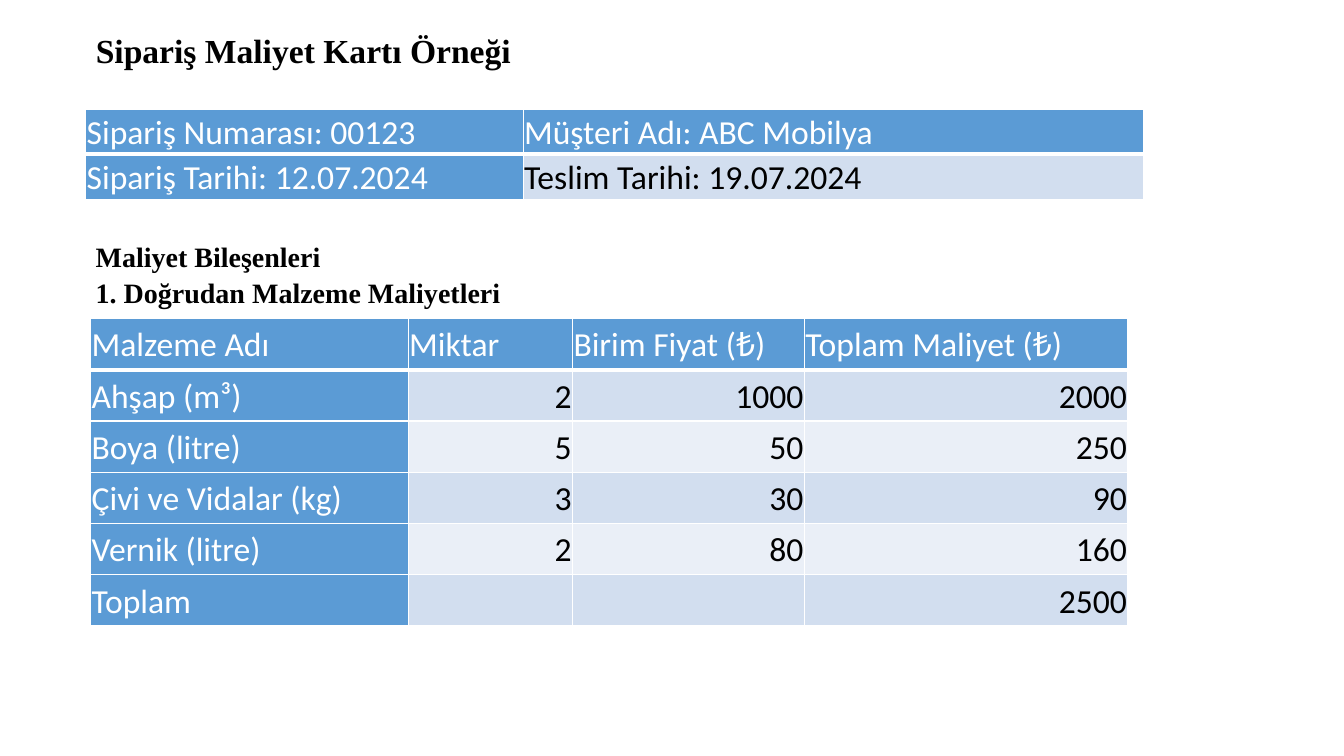
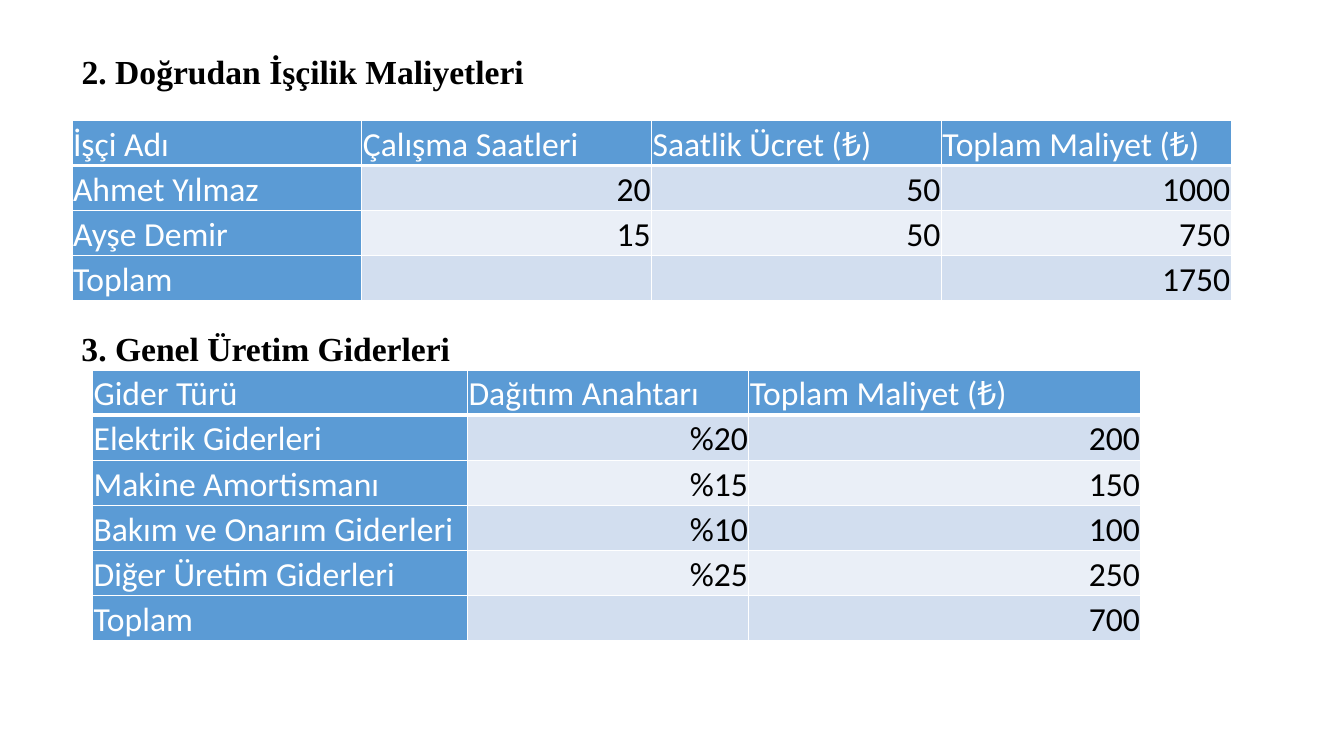
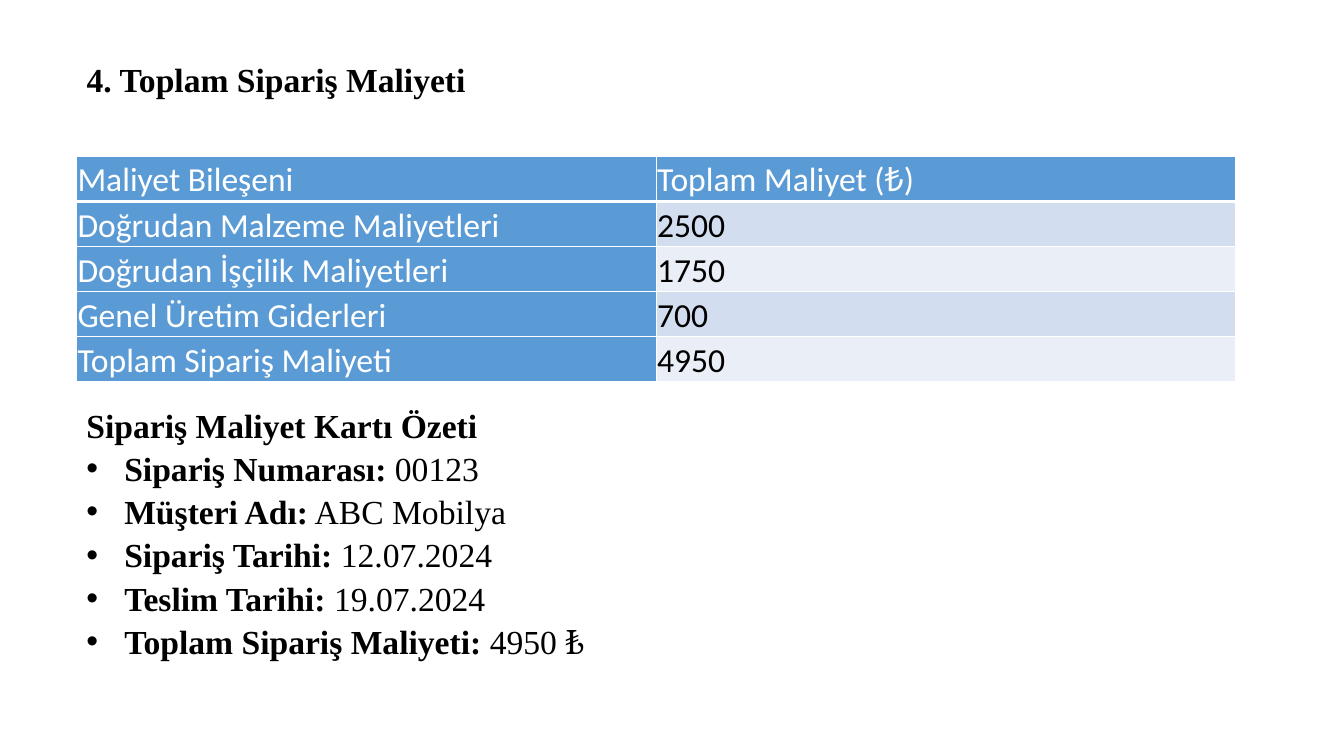
"""Build the three slides of an order cost card with its cost tables."""

import dataclasses

import lxml.etree
import pptx
import pptx.dml.color
import pptx.enum.text
import pptx.oxml.ns
import pptx.presentation
import pptx.shapes.base
import pptx.slide
import pptx.table
import pptx.text.text
import pptx.util

Pt = pptx.util.Pt
RGBColor = pptx.dml.color.RGBColor
Align = pptx.enum.text.PP_ALIGN
Anchor = pptx.enum.text.MSO_ANCHOR
AutoSize = pptx.enum.text.MSO_AUTO_SIZE

BLACK = RGBColor(0x00, 0x00, 0x00)
WHITE = RGBColor(0xFF, 0xFF, 0xFF)
BLUE = RGBColor(0x5B, 0x9B, 0xD5)
BAND_DARK = RGBColor(0xD2, 0xDE, 0xEF)
BAND_LIGHT = RGBColor(0xEA, 0xEF, 0xF7)

HEADING_FONT = "Times New Roman"
TABLE_FONT = "Calibri"
TEXT_SIZE = 24
LINE_SPACING = 1.07
CELL_MARGIN = 0.7
BULLET_INDENT = 27


@dataclasses.dataclass(frozen=True)
class Box:
    left: float
    top: float
    width: float
    height: float


@dataclasses.dataclass(frozen=True)
class Heading:
    box: Box
    lines: tuple[str, ...]
    size: float = TEXT_SIZE
    line_spacing: float = LINE_SPACING
    bullets: tuple[tuple[str, str], ...] = ()


@dataclasses.dataclass(frozen=True)
class CostTable:
    left: float
    top: float
    widths: tuple[float, ...]
    rows: tuple[tuple[str, ...], ...]
    row_height: float = 32.25
    value_alignment: Align = Align.RIGHT


@dataclasses.dataclass(frozen=True)
class CardSlide:
    title: Heading
    tables: tuple[CostTable, ...]
    section: Heading


SLIDES = (
    CardSlide(
        title=Heading(Box(61.2, 18, 831.6, 36), ("Sipariş Maliyet Kartı Örneği",), line_spacing=1),
        tables=(
            CostTable(
                61.2, 77.8, (312.5, 443.5),
                (
                    ("Sipariş Numarası: 00123", "Müşteri Adı: ABC Mobilya"),
                    ("Sipariş Tarihi: 12.07.2024", "Teslim Tarihi: 19.07.2024"),
                ),
                value_alignment=Align.JUSTIFY,
            ),
            CostTable(
                64.8, 227.5, (226.8, 117.4, 165.6, 231.1),
                (
                    ("Malzeme Adı", "Miktar", "Birim Fiyat (₺)", "Toplam Maliyet (₺)"),
                    ("Ahşap (m³)", "2", "1000", "2000"),
                    ("Boya (litre)", "5", "50", "250"),
                    ("Çivi ve Vidalar (kg)", "3", "30", "90"),
                    ("Vernik (litre)", "2", "80", "160"),
                    ("Toplam", "", "", "2500"),
                ),
                row_height=36.6,
            ),
        ),
        section=Heading(
            Box(61.2, 165.6, 815.8, 57.6),
            ("Maliyet Bileşenleri", "1. Doğrudan Malzeme Maliyetleri"),
            size=20,
        ),
    ),
    CardSlide(
        title=Heading(Box(51.1, 31, 859.7, 36.7), ("2. Doğrudan İşçilik Maliyetleri",)),
        tables=(
            CostTable(
                51.5, 86, (207,) * 4,
                (
                    ("İşçi Adı", "Çalışma Saatleri", "Saatlik Ücret (₺)", "Toplam Maliyet (₺)"),
                    ("Ahmet Yılmaz", "20", "50", "1000"),
                    ("Ayşe Demir", "15", "50", "750"),
                    ("Toplam", "", "", "1750"),
                ),
            ),
            CostTable(
                66.2, 264.4, (267.8, 200.9, 280.1),
                (
                    ("Gider Türü", "Dağıtım Anahtarı", "Toplam Maliyet (₺)"),
                    ("Elektrik Giderleri", "%20", "200"),
                    ("Makine Amortismanı", "%15", "150"),
                    ("Bakım ve Onarım Giderleri", "%10", "100"),
                    ("Diğer Üretim Giderleri", "%25", "250"),
                    ("Toplam", "", "700"),
                ),
            ),
        ),
        section=Heading(Box(51.1, 229, 867.6, 38.2), ("3. Genel Üretim Giderleri",)),
    ),
    CardSlide(
        title=Heading(Box(54.7, 38.2, 851.8, 36), ("4. Toplam Sipariş Maliyeti",), line_spacing=1),
        tables=(
            CostTable(
                54.7, 111.6, (414,) * 2,
                (
                    ("Maliyet Bileşeni", "Toplam Maliyet (₺)"),
                    ("Doğrudan Malzeme Maliyetleri", "2500"),
                    ("Doğrudan İşçilik Maliyetleri", "1750"),
                    ("Genel Üretim Giderleri", "700"),
                    ("Toplam Sipariş Maliyeti", "4950"),
                ),
                value_alignment=Align.JUSTIFY,
            ),
        ),
        section=Heading(
            Box(54.7, 283.7, 802.1, 192.2),
            ("Sipariş Maliyet Kartı Özeti",),
            bullets=(
                ("Sipariş Numarası:", " 00123"),
                ("Müşteri Adı:", " ABC Mobilya"),
                ("Sipariş Tarihi:", " 12.07.2024"),
                ("Teslim Tarihi:", " 19.07.2024"),
                ("Toplam Sipariş Maliyeti:", " 4950 ₺"),
            ),
        ),
    ),
)


def add_text(
    paragraph: pptx.text.text._Paragraph,
    text: str,
    *,
    font: str = HEADING_FONT,
    size: float = TEXT_SIZE,
    color: RGBColor = BLACK,
    bold: bool = False,
    alignment: Align = Align.JUSTIFY,
    line_spacing: float = LINE_SPACING,
    space_after: float = 0,
) -> None:
    """Append a formatted run to a paragraph and set the paragraph format."""
    paragraph.alignment = alignment
    paragraph.line_spacing = line_spacing
    paragraph.space_after = Pt(space_after)
    run = paragraph.add_run()
    run.text = text
    run.font.name = font
    run.font.size = Pt(size)
    run.font.bold = bold
    run.font.color.rgb = color


def add_bullet(paragraph: pptx.text.text._Paragraph) -> None:
    """Give a paragraph a hanging round bullet."""
    properties = paragraph._p.get_or_add_pPr()
    properties.set("marL", str(Pt(BULLET_INDENT)))
    properties.set("indent", str(-Pt(BULLET_INDENT)))
    for tag, name, value in (("a:buFont", "typeface", "Arial"), ("a:buChar", "char", "•")):
        lxml.etree.SubElement(properties, pptx.oxml.ns.qn(tag)).set(name, value)


def fill_heading(shape: pptx.shapes.base.BaseShape, heading: Heading) -> None:
    """Place a text shape and write its bold lines and bullets."""
    box = heading.box
    shape.left, shape.top = Pt(box.left), Pt(box.top)
    shape.width, shape.height = Pt(box.width), Pt(box.height)
    frame = shape.text_frame
    frame.word_wrap = True
    frame.auto_size = AutoSize.SHAPE_TO_FIT_TEXT
    frame.vertical_anchor = Anchor.TOP
    for index, line in enumerate(heading.lines):
        paragraph = frame.add_paragraph() if index else frame.paragraphs[0]
        alignment = Align.LEFT if heading.line_spacing == 1 else Align.JUSTIFY
        add_text(paragraph, line, size=heading.size, bold=True,
                 alignment=alignment, line_spacing=heading.line_spacing)
    for label, value in heading.bullets:
        paragraph = frame.add_paragraph()
        add_text(paragraph, label, size=heading.size, bold=True)
        add_text(paragraph, value, size=heading.size)
        add_bullet(paragraph)


def set_borders(cell: pptx.table._Cell, bottom: float) -> None:
    """Draw white cell borders, with a bottom line of the given width."""
    properties = cell._tc.get_or_add_tcPr()
    for side, width in (("L", 1), ("R", 1), ("T", 1), ("B", bottom)):
        line = lxml.etree.SubElement(properties, pptx.oxml.ns.qn(f"a:ln{side}"))
        line.set("w", str(Pt(width)))
        fill = lxml.etree.SubElement(line, pptx.oxml.ns.qn("a:solidFill"))
        lxml.etree.SubElement(fill, pptx.oxml.ns.qn("a:srgbClr")).set("val", str(WHITE))


def add_cost_table(slide: pptx.slide.Slide, cost_table: CostTable) -> None:
    """Add a table with a blue header row and column and banded values."""
    row_count, column_count = len(cost_table.rows), len(cost_table.widths)
    table = slide.shapes.add_table(
        row_count, column_count, Pt(cost_table.left), Pt(cost_table.top),
        Pt(sum(cost_table.widths)), Pt(cost_table.row_height * row_count),
    ).table
    table.first_col = True
    for column, width in zip(table.columns, cost_table.widths):
        column.width = Pt(width)
    for row_index, values in enumerate(cost_table.rows):
        table.rows[row_index].height = Pt(cost_table.row_height)
        band = BAND_DARK if row_index % 2 else BAND_LIGHT
        for column_index, value in enumerate(values):
            is_header = row_index == 0 or column_index == 0
            cell = table.cell(row_index, column_index)
            set_borders(cell, 1 if row_index else 3)
            cell.fill.solid()
            cell.fill.fore_color.rgb = BLUE if is_header else band
            cell.vertical_anchor = Anchor.MIDDLE
            cell.margin_left = cell.margin_right = Pt(CELL_MARGIN)
            cell.margin_top = cell.margin_bottom = Pt(CELL_MARGIN)
            if value:
                add_text(
                    cell.text_frame.paragraphs[0], value, font=TABLE_FONT,
                    color=WHITE if is_header else BLACK,
                    alignment=Align.JUSTIFY if is_header else cost_table.value_alignment,
                    space_after=8,
                )


def add_card_slide(presentation: pptx.presentation.Presentation, card: CardSlide) -> None:
    """Add one slide with its title, tables and section text."""
    slide = presentation.slides.add_slide(presentation.slide_layouts.get_by_name("Title Only"))
    fill_heading(slide.shapes.title, card.title)
    for cost_table in card.tables:
        add_cost_table(slide, cost_table)
    fill_heading(slide.shapes.add_textbox(0, 0, 0, 0), card.section)


def main() -> None:
    """Build and save the presentation."""
    presentation = pptx.Presentation()
    presentation.slide_width, presentation.slide_height = Pt(960), Pt(540)
    for card in SLIDES:
        add_card_slide(presentation, card)
    presentation.save("out.pptx")


if __name__ == "__main__":
    main()
